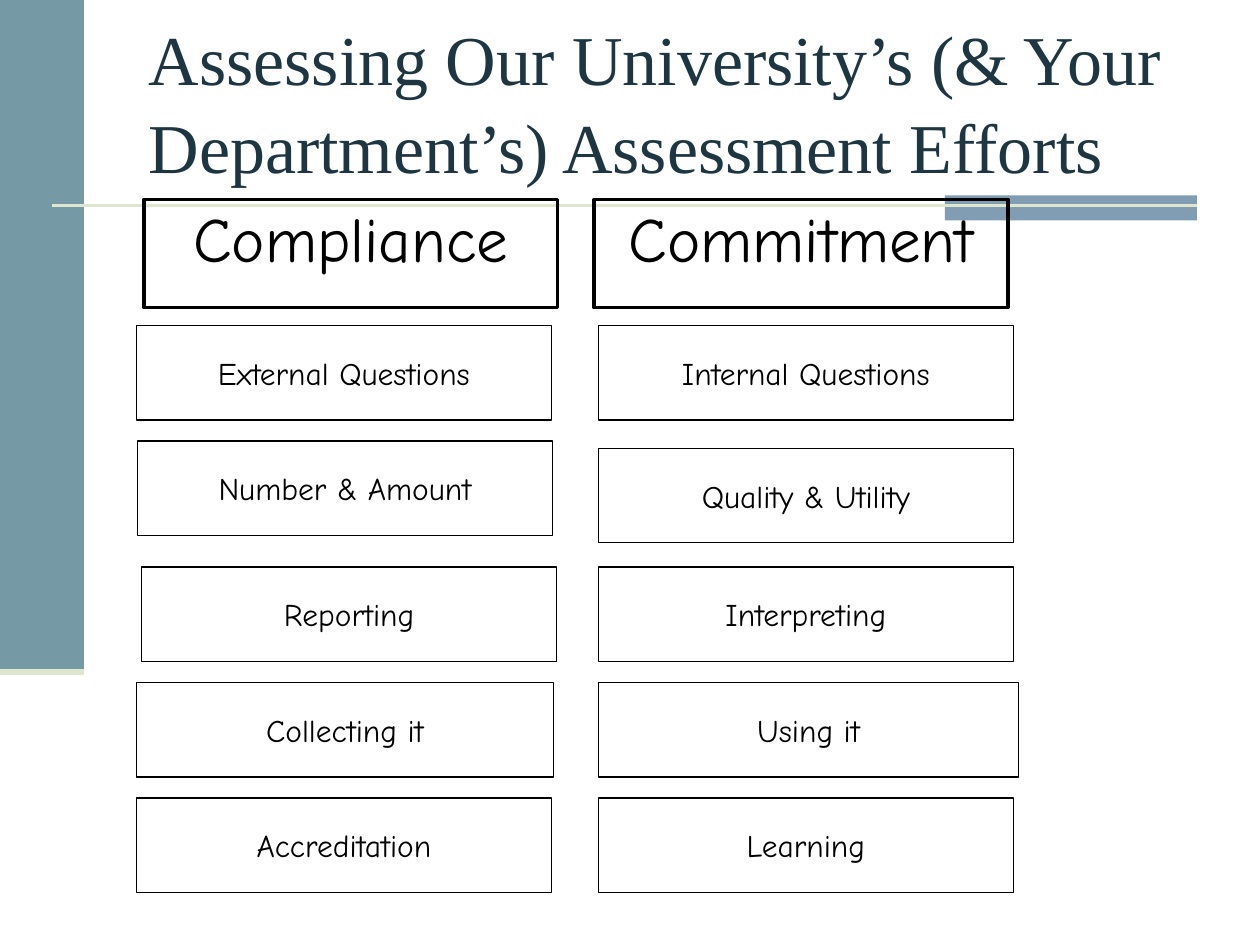
from lxml import etree
from pptx import Presentation
from pptx.dml.color import RGBColor
from pptx.enum.shapes import MSO_CONNECTOR, MSO_SHAPE
from pptx.enum.text import MSO_ANCHOR, PP_ALIGN
from pptx.oxml.ns import qn
from pptx.util import Inches, Pt

TEAL = RGBColor(0x75, 0x9A, 0xA5)
BLUE = RGBColor(0x80, 0x9D, 0xB3)
CREAM = RGBColor(0xDF, 0xE6, 0xD0)
NAVY = RGBColor(0x1D, 0x36, 0x41)
BLACK = RGBColor(0x00, 0x00, 0x00)

deck = Presentation()
deck.slide_width, deck.slide_height = Inches(10), Inches(7.5)
slide = deck.slides.add_slide(deck.slide_layouts[6])
shapes = slide.shapes

# Grid of 120 columns by 90 rows
CELL = deck.slide_width / 120


def grid(*cells):
    return [round(CELL * cell) for cell in cells]


def write(holder, text, font="Comic Neue", size=18, color=BLACK, inset=0.04,
          align=PP_ALIGN.CENTER, anchor=MSO_ANCHOR.MIDDLE, spacing=None):
    frame = holder.text_frame
    frame.word_wrap = True
    frame.vertical_anchor = anchor
    frame.margin_left = frame.margin_right = Inches(inset)
    frame.margin_top = frame.margin_bottom = Inches(min(inset, 0.05))
    paragraph = frame.paragraphs[0]
    paragraph.alignment = align
    paragraph.line_spacing = spacing
    run = paragraph.add_run()
    run.text = text
    run.font.name, run.font.size = font, Pt(size)
    run.font.color.rgb = color


# Side band and accent bar
for area, color in (((0, 0, 8, 64), TEAL), ((90, 18.6, 24, 2.4), BLUE)):
    band = shapes.add_shape(MSO_SHAPE.RECTANGLE, *grid(*area))
    band.shadow.inherit = False
    band.fill.solid()
    band.fill.fore_color.rgb = color
    band.line.fill.background()

# Rules under the title and the side band
for ends, width in (((5, 19.6, 114, 19.6), 1.5), ((0, 64, 8, 64), 3.5)):
    rule = shapes.add_connector(MSO_CONNECTOR.STRAIGHT, *grid(*ends))
    rule.line.color.rgb = CREAM
    rule.line.width = Pt(width)
    etree.SubElement(rule._element.spPr, qn("a:effectLst"))

# Two compared columns: left, top, width, height and wording of each box
BOX, HEADING = (39.5, 9), (39.4, 10.3)
boxes = [
    (13, 31, *BOX, "External Questions"),
    (57, 31, *BOX, "Internal Questions"),
    (13.1, 42, *BOX, "Number & Amount"),
    (57, 42.7, *BOX, "Quality & Utility"),
    (13.5, 54, *BOX, "Reporting"),
    (57, 54, *BOX, "Interpreting"),
    (13, 65, 39.7, 9, "Collecting it"),
    (57, 65, 40, 9, "Using it"),
    (13, 76, *BOX, "Accreditation"),
    (57, 76, *BOX, "Learning"),
    (13.7, 19, *HEADING, "Compliance"),
    (56.6, 19, *HEADING, "Commitment"),
]
for *area, wording in boxes:
    box = shapes.add_shape(MSO_SHAPE.RECTANGLE, *grid(*area))
    box.shadow.inherit = False
    box.fill.background()
    box.line.color.rgb = BLACK
    if wording in ("Compliance", "Commitment"):
        box.line.width = Pt(2)
        write(box, wording, size=36, inset=0, anchor=MSO_ANCHOR.TOP)
    else:
        box.line.width = Pt(0.75)
        write(box, wording)

# Title
title = shapes.add_textbox(*grid(13, 2, 102, 15))
write(title, "Assessing Our University’s (& Your Department’s) Assessment Efforts",
      font="Times New Roman", size=40, color=NAVY, inset=0.1,
      align=PP_ALIGN.LEFT, spacing=1.04)

deck.save("out.pptx")
